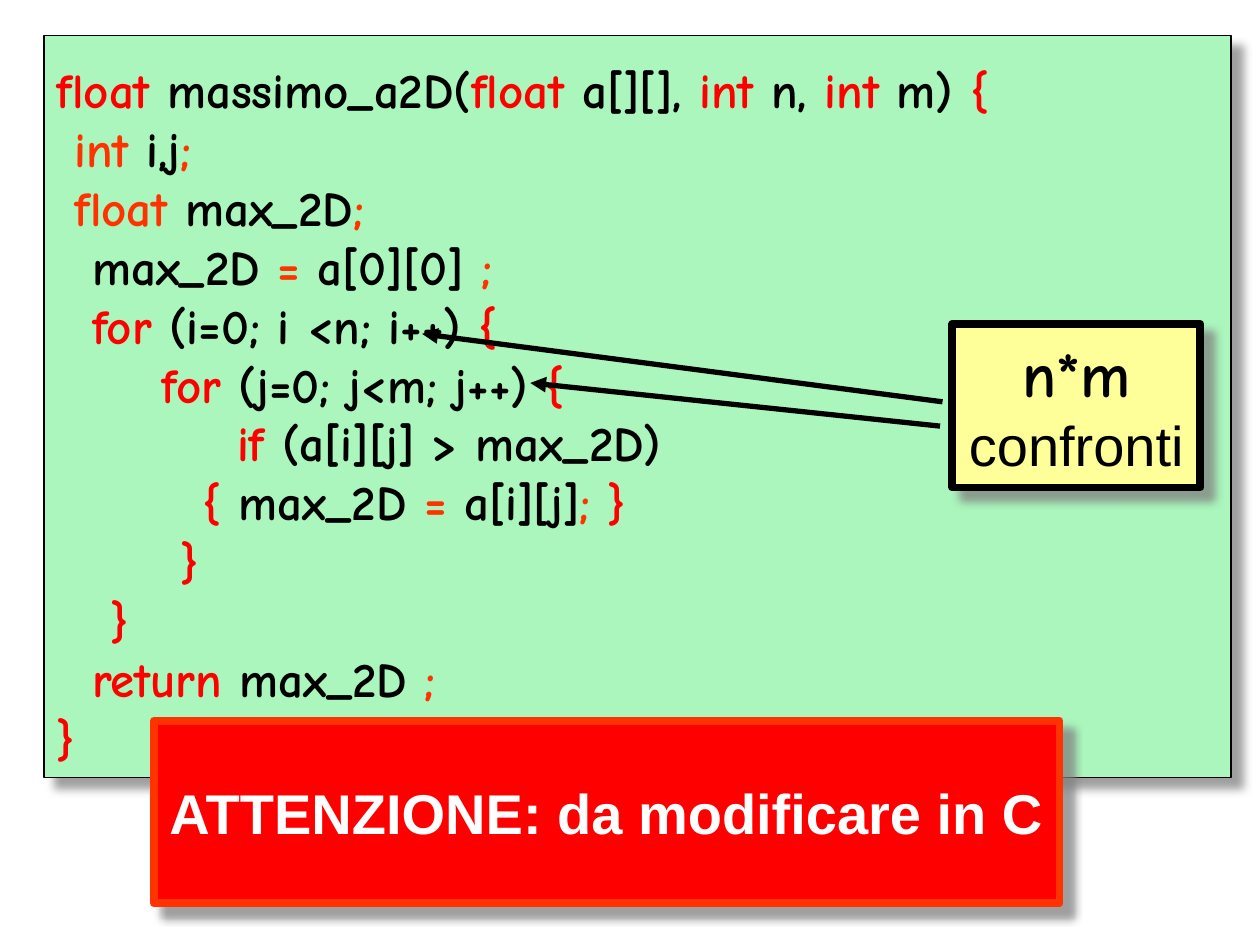
from dataclasses import dataclass

from lxml import etree
from pptx import Presentation
from pptx import util as u
from pptx.dml.color import RGBColor
from pptx.enum import shapes, text
from pptx.oxml import ns

BLACK = RGBColor(0x00, 0x00, 0x00)
WHITE = RGBColor(0xFF, 0xFF, 0xFF)
RED = RGBColor(0xFF, 0x00, 0x00)
ORANGE = RGBColor(0xFF, 0x33, 0x00)
GREEN = RGBColor(0xAA, 0xF6, 0xBC)
YELLOW = RGBColor(0xFF, 0xFF, 0x99)
GREY = RGBColor(0x80, 0x80, 0x80)

CODE = dict(name="Comic Neue", size=u.Pt(28), bold=True)
COUNT = dict(name="Comic Neue", size=u.Pt(36), bold=True)
LABEL = dict(name="Arial", size=u.Pt(32), bold=False)
ALERT = dict(name="Arial", size=u.Pt(32), bold=True)


@dataclass
class Line:
    runs: list  # (colour, text) pairs
    font: dict
    indent: float = 0
    align: int = text.PP_ALIGN.LEFT


@dataclass
class Box:
    area: tuple  # left, top, width, height in cm
    fill: RGBColor
    edge: RGBColor
    weight: float
    lines: list
    wrap: bool = False
    anchor: int = text.MSO_ANCHOR.MIDDLE
    top: float = 0.13


@dataclass
class Arrow:
    start: tuple
    end: tuple


def add_node(parent, tag: str, **attrs):
    return etree.SubElement(parent, ns.qn(tag), attrs)


def add_shadow(shape) -> None:
    shape.shadow.inherit = False
    effects = shape._element.spPr.find(ns.qn("a:effectLst"))
    shade = add_node(effects, "a:outerShdw", blurRad=str(u.Pt(5)),
                     dist=str(u.Pt(8.5)), dir="2700000", algn="tl", rotWithShape="0")
    colour = add_node(shade, "a:srgbClr", val=str(GREY))
    add_node(colour, "a:alpha", val="75000")


def add_line(para, line: Line) -> None:
    para.alignment = line.align
    if line.indent:
        para._p.get_or_add_pPr().set("marL", str(u.Cm(line.indent)))
    for colour, words in line.runs:
        run = para.add_run()
        run.text = words
        for key, value in line.font.items():
            setattr(run.font, key, value)
        run.font.color.rgb = colour


def add_box(slide, box: Box) -> None:
    shape = slide.shapes.add_shape(shapes.MSO_SHAPE.RECTANGLE, *map(u.Cm, box.area))
    shape.fill.solid()
    shape.fill.fore_color.rgb = box.fill
    shape.line.color.rgb = box.edge
    shape.line.width = u.Pt(box.weight)
    add_shadow(shape)
    frame = shape.text_frame
    setup = dict(word_wrap=box.wrap, vertical_anchor=box.anchor, margin_top=u.Cm(box.top))
    for key, value in setup.items():
        setattr(frame, key, value)
    for i, line in enumerate(box.lines):
        add_line(frame.add_paragraph() if i else frame.paragraphs[0], line)


def add_arrow(slide, arrow: Arrow) -> None:
    link = slide.shapes.add_connector(
        shapes.MSO_CONNECTOR.STRAIGHT, *map(u.Cm, arrow.start + arrow.end))
    link.line.color.rgb = BLACK
    link.line.width = u.Pt(3)
    add_node(link.line._get_or_add_ln(), "a:tailEnd", type="triangle")
    add_node(link._element.spPr, "a:effectLst")


# Code listing: indent in cm, then coloured runs
LISTING = [
    (0, [(RED, "float"), (BLACK, " massimo_a2D("), (RED, "float "), (BLACK, "a[][], "),
         (RED, "int "), (BLACK, "n, "), (RED, "int "), (BLACK, "m)"), (RED, " {")]),
    (0.36, [(RED, "int "), (BLACK, "i,j"), (ORANGE, ";")]),
    (0.36, [(ORANGE, "float"), (BLACK, " max_2D"), (ORANGE, ";")]),
    (0.72, [(BLACK, "max_2D "), (ORANGE, "="), (BLACK, " a[0][0]"), (ORANGE, " ;")]),
    (0.72, [(RED, "for "), (BLACK, "(i=0; i <n; i++) "), (RED, "{")]),
    (2.12, [(RED, "for "), (BLACK, "(j=0; j<m; j++) "), (RED, "{")]),
    (3.64, [(RED, "if "), (BLACK, "(a[i][j] > max_2D)")]),
    (2.95, [(RED, "{ "), (BLACK, "max_2D "), (ORANGE, "= "), (BLACK, "a[i][j]"),
            (ORANGE, ";"), (RED, " }")]),
    (2.5, [(RED, "}")]),
    (1.08, [(RED, "}")]),
    (0.72, [(RED, "return "), (BLACK, "max_2D"), (ORANGE, " ;")]),
    (0, [(RED, "}")]),
]
# The first keyword of the declarations shares the orange of its semicolon
LISTING[1][1][0] = (ORANGE, "int ")

MID = text.PP_ALIGN.CENTER
PANEL = Box((0.89, 0.71, 23.93, 14.96), GREEN, BLACK, 0.75,
            [Line(runs, CODE, indent) for indent, runs in LISTING],
            wrap=True, anchor=text.MSO_ANCHOR.TOP, top=0.5)
NOTE = Box((19.2, 6.53, 5, 3.3), YELLOW, BLACK, 4.5,
           [Line([(BLACK, "n*m")], COUNT, align=MID),
            Line([(BLACK, "confronti")], LABEL, align=MID)])
ALARM = Box((3.1, 14.53, 18.26, 3.68), RED, ORANGE, 4.5,
            [Line([(WHITE, "ATTENZIONE: da modificare in C")], ALERT, align=MID)])
ARROWS = [Arrow((19, 8.1), (8.51, 6.73)), Arrow((18.95, 8.59), (10.69, 7.72))]


def main() -> None:
    deck = Presentation()
    deck.slide_width, deck.slide_height = u.Cm(25.4), u.Cm(19.05)
    slide = deck.slides.add_slide(deck.slide_layouts[6])

    # Code panel and the comparison count
    add_box(slide, PANEL)
    add_box(slide, NOTE)

    # Arrows from the count to both loops
    for arrow in ARROWS:
        add_arrow(slide, arrow)

    # Warning over the panel's lower edge
    add_box(slide, ALARM)
    deck.save("out.pptx")


if __name__ == "__main__":
    main()
